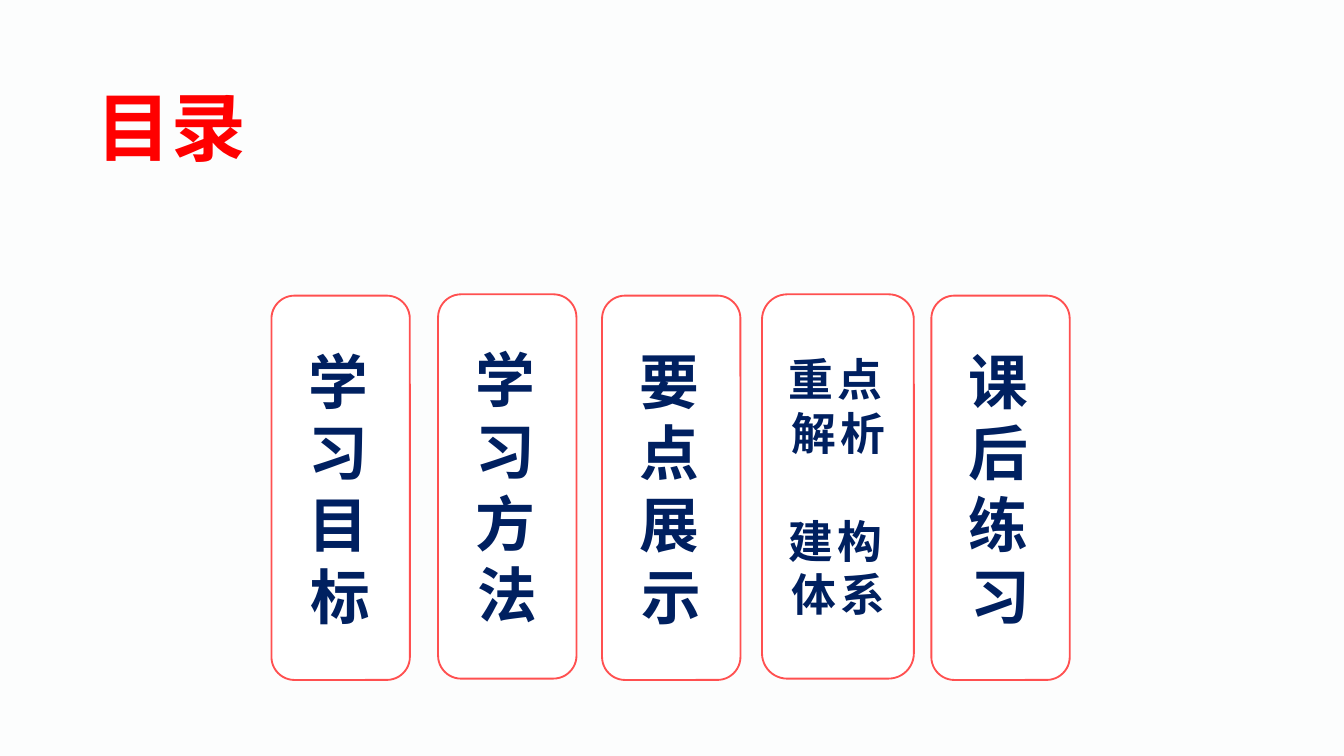
import dataclasses

import pptx
import pptx.dml.color
import pptx.enum.shapes
import pptx.enum.text
import pptx.oxml.ns
import pptx.util
from lxml import etree

Inches = pptx.util.Inches
Pt = pptx.util.Pt
Color = pptx.dml.color.RGBColor
Align = pptx.enum.text.PP_ALIGN
Anchor = pptx.enum.text.MSO_ANCHOR


@dataclasses.dataclass(frozen=True)
class Theme:
    font: str = "Noto Sans CJK SC"
    background: str = "FCFDFD"
    title: str = "FF0000"
    card_fill: str = "FFFFFF"
    card_line: str = "FF5050"
    card_text: str = "002060"
    title_size: int = 40
    card_size: int = 32
    small_size: int = 24
    line_height: float = 1.2
    letter_spacing: float = 2.3


THEME = Theme()
SLIDE_WIDTH = Inches(10)
SLIDE_HEIGHT = SLIDE_WIDTH * 9 // 16
CARD_HEIGHT = 2.86
CARDS = [
    (2.02, 2.20, 1.03, THEME.card_size, ["学习目标"]),
    (3.26, 2.19, 1.03, THEME.card_size, ["学习方法"]),
    (4.48, 2.20, 1.03, THEME.card_size, ["要点展示"]),
    (5.67, 2.19, 1.13, THEME.small_size, ["重点解析", "建构体系"]),
    (6.93, 2.20, 1.03, THEME.card_size, ["课后练习"]),
]


def apply_format(target, values):
    for name, value in values.items():
        setattr(target, name, value)


def write_paragraph(paragraph, text, size, color, alignment, spacing=0):
    line_pitch = Pt(size * THEME.line_height)
    apply_format(paragraph, {"alignment": alignment, "line_spacing": line_pitch})
    run = paragraph.add_run()
    run.text = text
    apply_format(run.font, {"name": THEME.font, "size": Pt(size), "bold": True})
    run.font.color.rgb = Color.from_string(color)
    properties = run.font._element
    east_asian = etree.SubElement(properties, pptx.oxml.ns.qn("a:ea"))
    east_asian.set("typeface", THEME.font)
    if spacing:
        properties.set("spc", str(round(spacing * 100)))


def place_title(slide, text):
    title = slide.shapes.title
    apply_format(title, {
        "left": Inches(0.62), "top": Inches(0.55),
        "width": Inches(1.33), "height": Inches(0.77),
    })
    apply_format(title.text_frame, {
        "word_wrap": False,
        "vertical_anchor": Anchor.TOP,
        "auto_size": pptx.enum.text.MSO_AUTO_SIZE.SHAPE_TO_FIT_TEXT,
    })
    write_paragraph(title.text_frame.paragraphs[0], text,
                    THEME.title_size, THEME.title, Align.LEFT)


def add_card(slide, left, top, width, size, labels):
    card = slide.shapes.add_shape(
        pptx.enum.shapes.MSO_SHAPE.ROUNDED_RECTANGLE,
        Inches(left), Inches(top), Inches(width), Inches(CARD_HEIGHT))
    card.shadow.inherit = False
    card.fill.solid()
    card.fill.fore_color.rgb = Color.from_string(THEME.card_fill)
    card.line.color.rgb = Color.from_string(THEME.card_line)
    card.line.width = Pt(1)
    frame = card.text_frame
    apply_format(frame, {"word_wrap": True, "vertical_anchor": Anchor.MIDDLE})
    for index, label in enumerate(labels):
        paragraph = frame.add_paragraph() if index else frame.paragraphs[0]
        write_paragraph(paragraph, label, size, THEME.card_text,
                        Align.CENTER, THEME.letter_spacing)
        if index:
            paragraph.space_before = Pt(size * THEME.line_height)


def main():
    presentation = pptx.Presentation()
    apply_format(presentation, {
        "slide_width": SLIDE_WIDTH, "slide_height": SLIDE_HEIGHT,
    })
    slide = presentation.slides.add_slide(presentation.slide_layouts[5])
    slide.background.fill.solid()
    slide.background.fill.fore_color.rgb = Color.from_string(THEME.background)
    place_title(slide, "目录")
    for card in CARDS:
        add_card(slide, *card)
    presentation.save("out.pptx")


if __name__ == "__main__":
    main()
